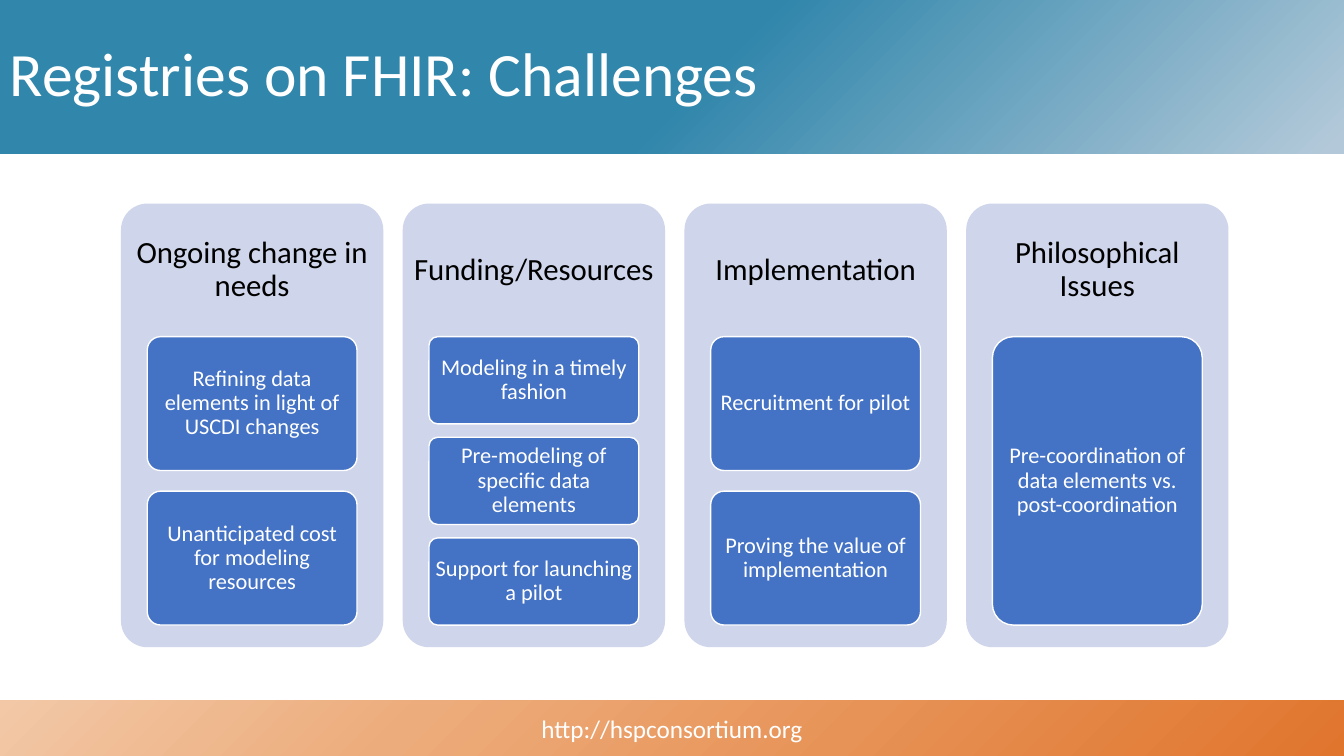
from dataclasses import dataclass

from pptx import Presentation
from pptx.dml.color import RGBColor
from pptx.enum.shapes import MSO_SHAPE
from pptx.enum.text import MSO_ANCHOR, PP_ALIGN
from pptx.oxml import parse_xml
from pptx.oxml.ns import nsdecls, qn
from pptx.util import Cm, Pt

RECTANGLE = MSO_SHAPE.RECTANGLE
ROUNDED = MSO_SHAPE.ROUNDED_RECTANGLE
MIDDLE = MSO_ANCHOR.MIDDLE
LEFT, CENTER = PP_ALIGN.LEFT, PP_ALIGN.CENTER


@dataclass(frozen=True)
class Theme:
    font: str = "Calibri"
    white: str = "FFFFFF"
    black: str = "000000"
    panel: str = "CFD5EA"
    card: str = "4472C4"
    header_stops: tuple = ((1, "B3C9D9"), (48, "3086AB"), (97, "3086AB"))
    footer_stops: tuple = ((0, "E0752D"), (69, "EDAC7B"), (100, "F2C8A7"))
    title_size: int = 44
    heading_size: int = 22
    footer_size: int = 18
    card_size: int = 16


THEME = Theme()

SLIDE_WIDTH, SLIDE_HEIGHT = 33.87, 19.05
HEADER_HEIGHT, FOOTER_HEIGHT = 3.87, 1.4
PANEL_LEFT, PANEL_TOP = 3.05, 5.13
PANEL_WIDTH, PANEL_HEIGHT, PANEL_STEP = 6.61, 11.18, 7.1
HEADING_HEIGHT = 0.3 * PANEL_HEIGHT
STACK_HEIGHT = 0.65 * PANEL_HEIGHT
CARD_WIDTH = 0.8 * PANEL_WIDTH
CARD_GAP_RATIO = 0.154

CHALLENGES = (
    ("Ongoing change in needs", (
        "Refining data elements in light of USCDI changes",
        "Unanticipated cost for modeling resources",
    )),
    ("Funding/Resources", (
        "Modeling in a timely fashion",
        "Pre-modeling of specific data elements",
        "Support for launching a pilot",
    )),
    ("Implementation", (
        "Recruitment for pilot",
        "Proving the value of implementation",
    )),
    ("Philosophical Issues", (
        "Pre-coordination of data elements vs. post-coordination",
    )),
)


def write_text(shape, text, size, color, align=CENTER, margins=(0.25, 0.13),
               line_spacing=0.9):
    """Fill a shape with one middle-anchored paragraph; margins are (side, top) in cm."""
    frame = shape.text_frame
    frame.word_wrap = True
    frame.vertical_anchor = MIDDLE
    frame.margin_left = frame.margin_right = Cm(margins[0])
    frame.margin_top = frame.margin_bottom = Cm(margins[1])
    frame.text = text
    paragraph = frame.paragraphs[0]
    paragraph.alignment = align
    paragraph.line_spacing = line_spacing
    font = paragraph.runs[0].font
    font.name = THEME.font
    font.size = Pt(size)
    font.color.rgb = RGBColor.from_string(color)


def add_text(slide, left, top, width, height, *text_settings, **text_options):
    box = slide.shapes.add_textbox(Cm(left), Cm(top), Cm(width), Cm(height))
    write_text(box, *text_settings, **text_options)


def add_gradient_band(slide, top, height, stops):
    """Add a full-width band whose gradient spreads from its bottom right corner."""
    band = slide.shapes.add_shape(RECTANGLE, 0, Cm(top), Cm(SLIDE_WIDTH), Cm(height))
    band.shadow.inherit = False
    band.line.fill.background()
    band.fill.background()
    stop_xml = "".join(
        f'<a:gs pos="{position * 1000}"><a:srgbClr val="{color}"/></a:gs>'
        for position, color in stops
    )
    gradient = parse_xml(
        f'<a:gradFill {nsdecls("a")} rotWithShape="1"><a:gsLst>{stop_xml}</a:gsLst>'
        '<a:path path="circle"><a:fillToRect l="100000" t="100000"/></a:path>'
        "</a:gradFill>"
    )
    properties = band._element.spPr
    properties.replace(properties.find(qn("a:noFill")), gradient)
    return band


def add_rounded_box(slide, left, top, width, height, fill, outline=None):
    box = slide.shapes.add_shape(ROUNDED, Cm(left), Cm(top), Cm(width), Cm(height))
    box.shadow.inherit = False
    box.adjustments[0] = 0.1
    box.fill.solid()
    box.fill.fore_color.rgb = RGBColor.from_string(fill)
    if outline:
        box.line.color.rgb = RGBColor.from_string(outline)
        box.line.width = Pt(1)
    else:
        box.line.fill.background()
    return box


def add_challenge(slide, left, heading, items):
    """Add a panel with its heading and a stack of cards that share its height."""
    add_rounded_box(slide, left, PANEL_TOP, PANEL_WIDTH, PANEL_HEIGHT, THEME.panel)
    add_text(slide, left, PANEL_TOP, PANEL_WIDTH, HEADING_HEIGHT, heading,
             THEME.heading_size, THEME.black, margins=(0.23, 0.23))
    count = len(items)
    card_height = STACK_HEIGHT / (count + (count - 1) * CARD_GAP_RATIO)
    card_left = left + (PANEL_WIDTH - CARD_WIDTH) / 2
    for index, item in enumerate(items):
        card_top = PANEL_TOP + HEADING_HEIGHT + index * card_height * (1 + CARD_GAP_RATIO)
        card = add_rounded_box(slide, card_left, card_top, CARD_WIDTH, card_height,
                               THEME.card, THEME.white)
        write_text(card, item, THEME.card_size, THEME.white, margins=(0.1, 0.08))


def main():
    presentation = Presentation()
    presentation.slide_width = Cm(SLIDE_WIDTH)
    presentation.slide_height = Cm(SLIDE_HEIGHT)
    slide = presentation.slides.add_slide(presentation.slide_layouts[6])

    add_gradient_band(slide, 0, HEADER_HEIGHT, THEME.header_stops)
    footer = add_gradient_band(slide, SLIDE_HEIGHT - FOOTER_HEIGHT, FOOTER_HEIGHT,
                               THEME.footer_stops)
    write_text(footer, "http://hspconsortium.org", THEME.footer_size, THEME.white,
               line_spacing=1.0)
    add_text(slide, 0, 0.1, SLIDE_WIDTH, 3.68, "Registries on FHIR: Challenges",
             THEME.title_size, THEME.white, align=LEFT)

    for index, (heading, items) in enumerate(CHALLENGES):
        add_challenge(slide, PANEL_LEFT + index * PANEL_STEP, heading, items)

    presentation.save("out.pptx")


if __name__ == "__main__":
    main()
